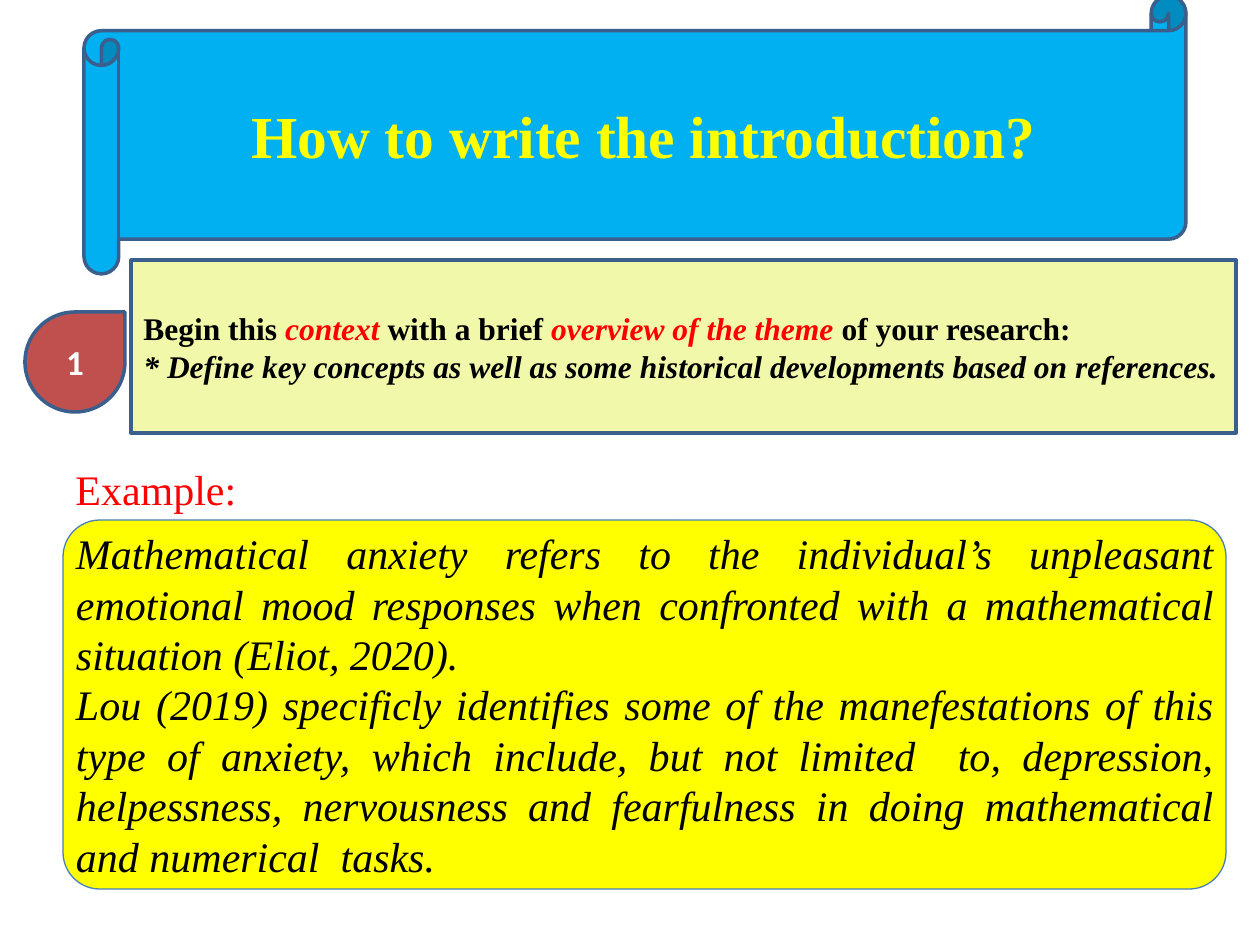
from pptx import Presentation
from pptx.dml.color import RGBColor
from pptx.enum.shapes import MSO_SHAPE
from pptx.enum.text import MSO_ANCHOR, MSO_AUTO_SIZE, PP_ALIGN
from pptx.util import Pt

EMU_PER_PX = 914400 / 126
SERIF = "Times New Roman"
OUTLINE = "3A5F8C"
RED = "FF0000"
YELLOW = "FFFF00"
BLACK = "000000"


def px(n):
    return round(n * EMU_PER_PX)


def rgb(value):
    return RGBColor.from_string(value)


def add_box(shapes, kind, box, fill, line=OUTLINE, weight=2):
    sp = shapes.add_shape(kind, *map(px, box))
    sp.shadow.inherit = False
    sp.fill.solid()
    sp.fill.fore_color.rgb = rgb(fill)
    sp.line.color.rgb = rgb(line)
    sp.line.width = Pt(weight)
    return sp


def write(sp, paragraphs, style, align=PP_ALIGN.LEFT, **frame):
    tf = sp.text_frame
    for name, value in {"word_wrap": True, "vertical_anchor": MSO_ANCHOR.MIDDLE, **frame}.items():
        setattr(tf, name, value)
    for i, runs in enumerate(paragraphs):
        p = tf.add_paragraph() if i else tf.paragraphs[0]
        p.alignment = align
        for text, changes in runs:
            r = p.add_run()
            r.text = text
            for name, value in {**style, **changes}.items():
                if name == "color":
                    r.font.color.rgb = rgb(value)
                else:
                    setattr(r.font, name, value)


def add_banner(s, box, title):
    sp = add_box(s.shapes, MSO_SHAPE.HORIZONTAL_SCROLL, box, "00B0F0")
    style = {"name": SERIF, "size": Pt(34), "bold": True, "color": YELLOW}
    write(sp, [[(title, {})]], style, PP_ALIGN.CENTER)


def add_step(s, box, number, paragraphs):
    x, y, w, h = box
    badge, gap = 100, 6
    marker = add_box(s.shapes, MSO_SHAPE.TEAR, (x, y + 52, badge, badge), "C0504D")
    style = {"name": "Calibri", "size": Pt(20), "bold": True, "color": "FFFFFF"}
    write(marker, [[(number, {})]], style, PP_ALIGN.CENTER)
    indent = badge + gap
    card = add_box(s.shapes, MSO_SHAPE.RECTANGLE, (x + indent, y, w - indent, h), "F2F8AA")
    style = {"name": SERIF, "size": Pt(18), "bold": True, "color": BLACK}
    write(card, paragraphs, style)


def add_example(s, box, label, paragraphs):
    x, y, w, h = box
    heading = 63
    style = {"name": SERIF, "size": Pt(24)}
    group = s.shapes.add_group_shape()
    panel = add_box(group.shapes, MSO_SHAPE.ROUNDED_RECTANGLE,
                    (x, y + heading, w, h - heading), YELLOW, "4B7EBC", 0.75)
    panel.adjustments[0] = 0.1
    body = group.shapes.add_textbox(*map(px, (x + 8, y + heading + 10, w - 15, h - heading - 21)))
    write(body, [[(text, {})] for text in paragraphs],
          {**style, "italic": True, "color": BLACK}, PP_ALIGN.JUSTIFY,
          margin_left=px(5), margin_right=px(5), margin_top=px(4), margin_bottom=px(4))
    caption = s.shapes.add_textbox(*map(px, (x, y, 198, heading)))
    write(caption, [[(label, {})]], {**style, "color": RED}, word_wrap=False,
          vertical_anchor=MSO_ANCHOR.TOP, auto_size=MSO_AUTO_SIZE.SHAPE_TO_FIT_TEXT)


def main():
    prs = Presentation()
    prs.slide_width, prs.slide_height = px(1260), px(945)
    s = prs.slides.add_slide(prs.slide_layouts[6])
    key = {"italic": True, "color": RED}
    add_banner(s, (84, -4, 1102, 278), "How to write the introduction?")
    add_step(s, (25, 260, 1211, 173), "1", [
        [("Begin this ", {}), ("context ", key), ("with a brief ", {}),
         ("overview of the theme ", key), ("of your research:", {})],
        [("* Define key concepts as well as some historical developments based on references.",
          {"italic": True})],
    ])
    add_example(s, (63, 457, 1163, 432), "Example:", [
        "Mathematical anxiety refers to the individual’s unpleasant emotional mood responses "
        "when confronted with a mathematical situation (Eliot, 2020).",
        "Lou (2019) specificly identifies some of the manefestations of this type of anxiety, "
        "which include, but not limited  to, depression, helpessness, nervousness and "
        "fearfulness in doing mathematical and numerical  tasks.",
    ])
    prs.save("out.pptx")


if __name__ == "__main__":
    main()
